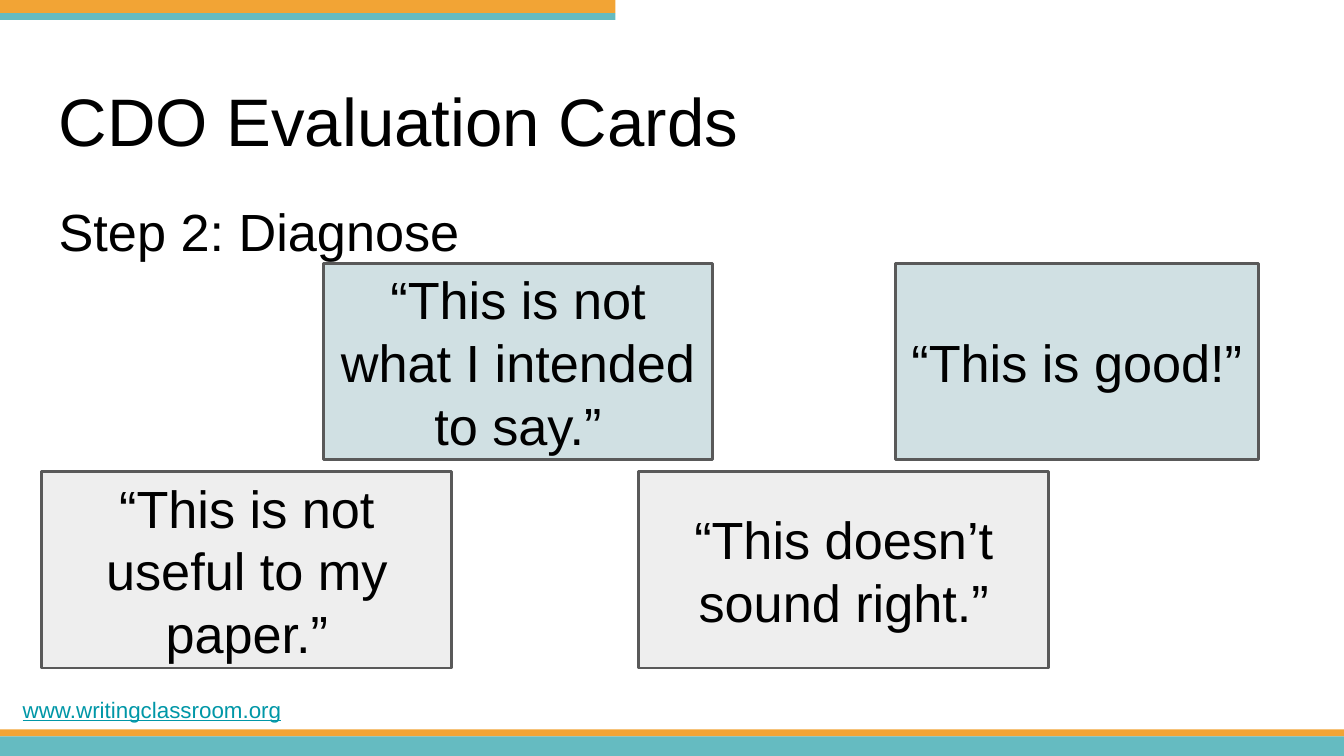
from lxml import etree
from pptx import Presentation, util as u
from pptx.dml.color import RGBColor
from pptx.enum import shapes, text
from pptx.oxml.ns import qn

ORANGE, TEAL = "F2A435", "65BBC1"
BLUE, GREY, DARK = "D0E0E3", "EEEEEE", "595959"


def rgb(value):
    """Return the colour for a hex string."""
    return RGBColor.from_string(value)


def write(sp, content, size, color="000000", align=text.PP_ALIGN.LEFT,
          anchor=text.MSO_ANCHOR.TOP):
    """Write one formatted paragraph in a shape and return it."""
    tf = sp.text_frame
    tf.text = content
    tf.word_wrap = True
    tf.auto_size = text.MSO_AUTO_SIZE.NONE
    tf.vertical_anchor = anchor
    tf.margin_left = tf.margin_right = u.Cm(0.25)
    tf.margin_top = tf.margin_bottom = u.Cm(0.25)
    p = tf.paragraphs[0]
    p.alignment = align
    p.space_before = u.Pt(0)
    font = p.runs[0].font
    font.name, font.size = "Arial", u.Pt(size)
    font.color.rgb = rgb(color)
    return p


def place(sp, box):
    """Move a shape to a box given in centimetres."""
    sp.left, sp.top, sp.width, sp.height = (u.Cm(v) for v in box)


def add_rect(s, box, fill):
    """Add a plain filled rectangle without a line."""
    sp = s.shapes.add_shape(shapes.MSO_SHAPE.RECTANGLE, *(u.Cm(v) for v in box))
    sp.shadow.inherit = False
    sp.fill.solid()
    sp.fill.fore_color.rgb = rgb(fill)
    sp.line.fill.background()
    return sp


def add_bands(s, box, upper, lower):
    """Fill a box with an orange band above a teal one."""
    left, top, width, _ = box
    add_rect(s, (left, top, width, upper), ORANGE)
    add_rect(s, (left, top + upper, width, lower), TEAL)


def add_footer(s, box):
    """Add the underlined web address."""
    sp = s.shapes.add_textbox(*(u.Cm(v) for v in box))
    write(sp, "www.writingclassroom.org", 12, "0097A7").runs[0].font.underline = True


def fill_title(s, box):
    """Place the slide title."""
    place(s.shapes.title, box)
    write(s.shapes.title, "CDO Evaluation Cards", 36)


def fill_body(s, box):
    """Place the step heading in the body without a bullet."""
    sp = s.placeholders[1]
    place(sp, box)
    p = write(sp, "Step 2: Diagnose", 28)
    p.line_spacing = 1.15
    p.space_after = u.Pt(12)
    pPr = p._p.get_or_add_pPr()
    pPr.set("marL", "0")
    pPr.set("indent", "0")
    etree.SubElement(pPr, qn("a:buNone"))


def add_card_row(s, box, fill, cards):
    """Add a row of cards, each given as offset, width and quote."""
    left, top, _, height = box
    for offset, width, quote in cards:
        sp = add_rect(s, (left + offset, top, width, height), fill)
        sp.line.color.rgb = rgb(DARK)
        sp.line.width = u.Pt(1.5)
        write(sp, quote, 28, align=text.PP_ALIGN.CENTER,
              anchor=text.MSO_ANCHOR.MIDDLE)


def main():
    """Build and save the slide."""
    prs = Presentation()
    prs.slide_width, prs.slide_height = u.Cm(25.4), u.Cm(14.29)
    s = prs.slides.add_slide(prs.slide_layouts[1])
    add_bands(s, (0, 0, 11.63, 0.38), 0.25, 0.13)
    add_bands(s, (0, 13.79, 25.4, 0.5), 0.13, 0.37)
    add_footer(s, (0.18, 12.9, 11.63, 1.22))
    fill_title(s, (0.86, 1.24, 23.67, 1.96))
    fill_body(s, (0.86, 3.33, 23.67, 9.5))
    add_card_row(s, (6.12, 4.98, 17.65, 3.71), BLUE, [
        (0, 7.34, "“This is not what I intended to say.”"),
        (10.8, 6.86, "“This is good!”"),
    ])
    add_card_row(s, (0.79, 8.92, 19.03, 3.71), GREY, [
        (0, 7.75, "“This is not useful to my paper.”"),
        (11.28, 7.75, "“This doesn’t sound right.”"),
    ])
    prs.save("out.pptx")


if __name__ == "__main__":
    main()
